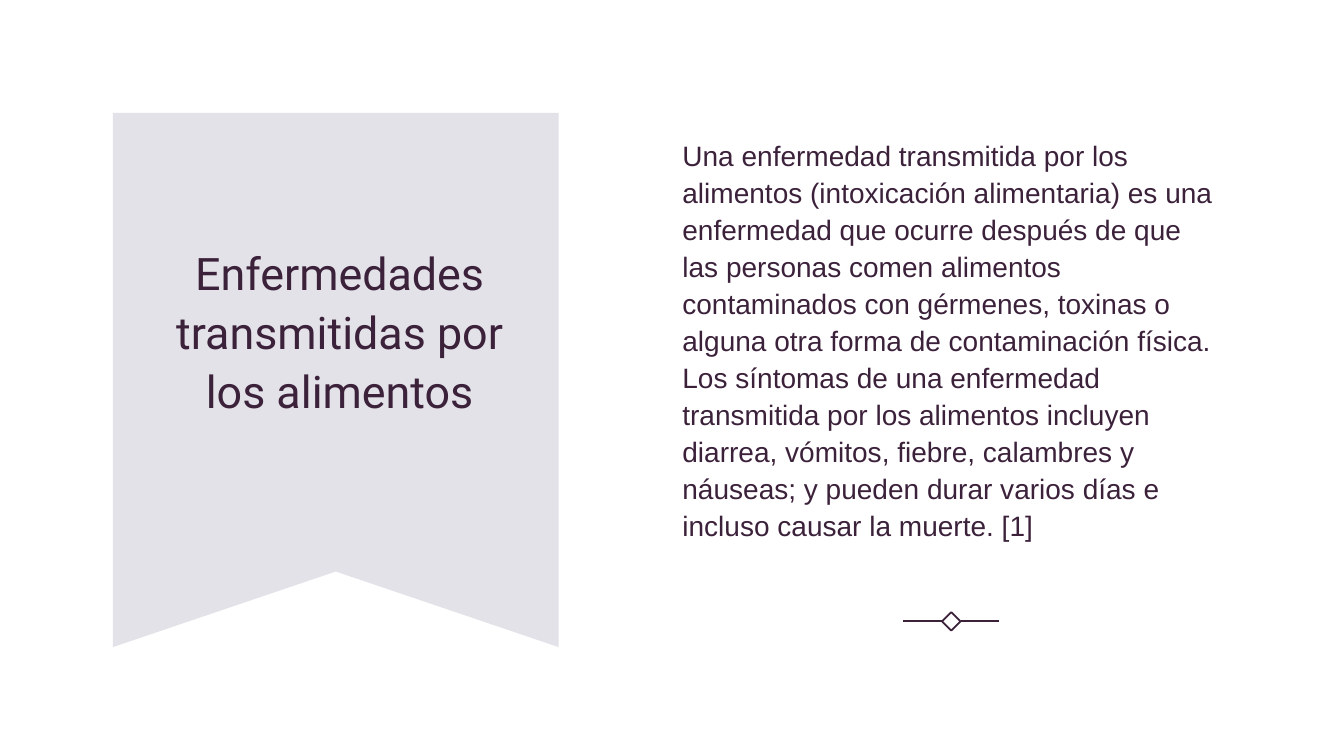
from dataclasses import dataclass

from lxml import etree
from pptx import Presentation
from pptx import util as u
from pptx.dml.color import RGBColor
from pptx.enum import shapes, text
from pptx.oxml.ns import qn

PX = 9144  # EMU in one px, 100 px to the inch
HUES = {"ink": "3B213A", "flag": "E3E2E8"}


@dataclass
class Label:
    words: str
    box: tuple[int, int, int, int]
    foot: int  # bottom inset, lifts the centred text
    font: str
    size: int
    align: text.PP_ALIGN


LABELS = [
    Label("Enfermedades transmitidas por los alimentos",
          (154, 190, 366, 335), 68, "Roboto", 32, text.PP_ALIGN.CENTER),
    Label("Una enfermedad transmitida por los alimentos (intoxicación alimentaria) "
          "es una enfermedad que ocurre después de que las personas comen alimentos "
          "contaminados con gérmenes, toxinas o alguna otra forma de contaminación "
          "física. Los síntomas de una enfermedad transmitida por los alimentos "
          "incluyen diarrea, vómitos, fiebre, calambres y náuseas; y pueden durar "
          "varios días e incluso causar la muerte. [1]",
          (667, 113, 554, 488), 47, "Arial", 20, text.PP_ALIGN.LEFT),
]
FLAG = [(112, 112), (554, 112), (554, 642), (333, 567), (112, 642)]
GEM = (937, 610, 13, 13)
RULE_Y = 616
RULES = [(896, 935), (953, 991)]


def px(*marks: int) -> list[int]:
    return [mark * PX for mark in marks]


def hue(name: str) -> RGBColor:
    return RGBColor.from_string(HUES[name])


def draw_flag(slide) -> None:
    pen = slide.shapes.build_freeform(*FLAG[0], scale=PX)
    pen.add_line_segments(FLAG[1:], close=True)
    flag = pen.convert_to_shape()
    flag.shadow.inherit = False
    flag.fill.solid()
    flag.fill.fore_color.rgb = hue("flag")
    flag.line.fill.background()


def draw_label(slide, label: Label) -> None:
    frame = slide.shapes.add_textbox(*px(*label.box)).text_frame
    frame.word_wrap = True
    frame.vertical_anchor = text.MSO_ANCHOR.MIDDLE
    frame.margin_bottom = label.foot * PX
    frame.text = label.words
    para = frame.paragraphs[0]
    para.alignment = label.align
    para.line_spacing = 1.1
    font = para.runs[0].font
    font.name = label.font
    font.size = u.Pt(label.size)
    font.color.rgb = hue("ink")


def ink_line(line) -> None:
    line.color.rgb = hue("ink")
    line.width = u.Pt(1.25)


def draw_mark(slide) -> None:
    """Draw the small diamond between two short rules."""
    gem = slide.shapes.add_shape(shapes.MSO_SHAPE.RECTANGLE, *px(*GEM))
    gem.rotation = 45
    gem.shadow.inherit = False
    gem.fill.background()
    ink_line(gem.line)
    for start, end in RULES:
        rule = slide.shapes.add_connector(
            shapes.MSO_CONNECTOR.STRAIGHT, *px(start, RULE_Y, end, RULE_Y))
        ink_line(rule.line)
        etree.SubElement(rule.element.spPr, qn("a:effectLst"))


def main() -> None:
    deck = Presentation()
    deck.slide_width, deck.slide_height = px(1333, 750)
    slide = deck.slides.add_slide(deck.slide_layouts[6])
    draw_flag(slide)
    for label in LABELS:
        draw_label(slide, label)
    draw_mark(slide)
    deck.save("out.pptx")


if __name__ == "__main__":
    main()
